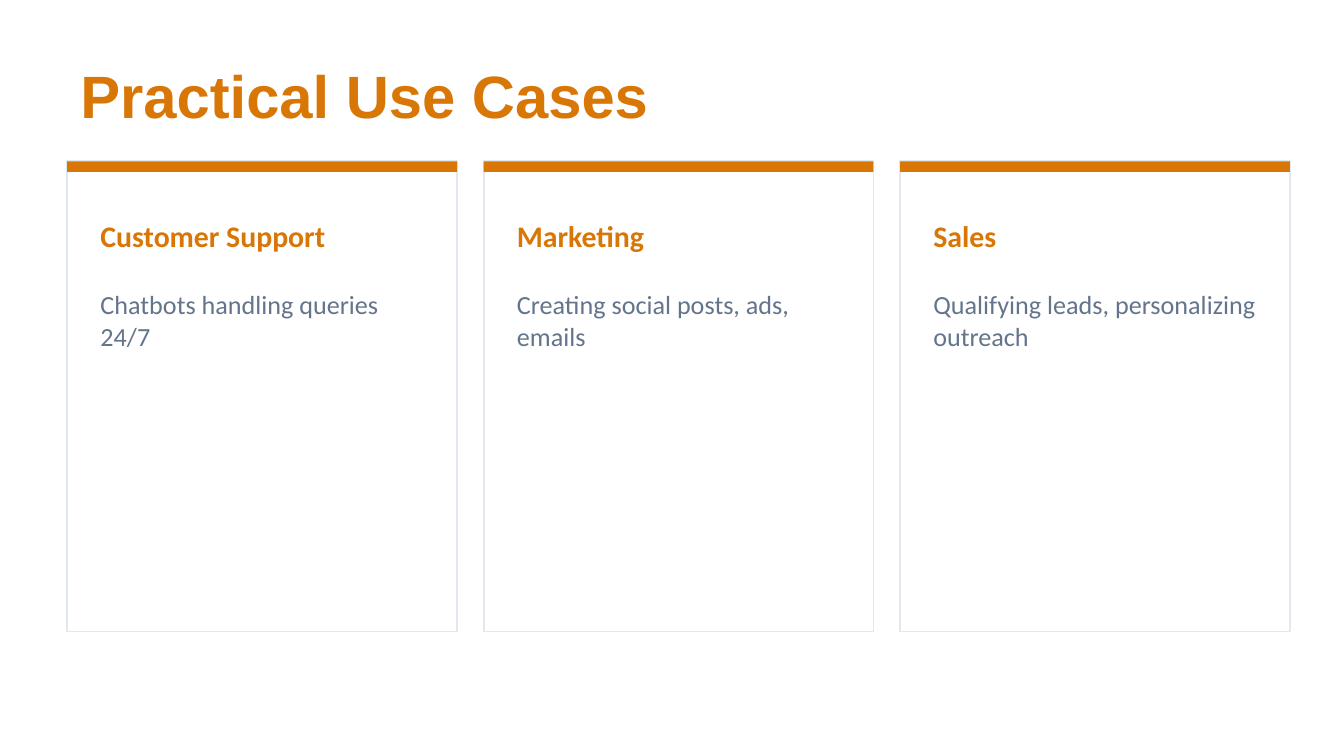
"""Build a slide with three cards of practical use cases."""
from pptx import Presentation
from pptx.dml.color import RGBColor
from pptx.enum.shapes import MSO_SHAPE as Shape
from pptx.enum.text import MSO_ANCHOR as Anchor
from pptx.util import Cm, Pt

AMBER = RGBColor(0xD9, 0x77, 0x06)
SLATE = RGBColor(0x64, 0x74, 0x8B)
BORDER = RGBColor(0xE2, 0xE8, 0xF0)
WHITE = RGBColor(0xFF, 0xFF, 0xFF)

LEFT, TOP = 1.27, 3.05
CARD_W, CARD_H, GAP = 7.37, 8.89, 0.5
BAR_H, INSET = 0.2, 0.38

USE_CASES = [
    ("Customer Support", "Chatbots handling queries 24/7"),
    ("Marketing", "Creating social posts, ads, emails"),
    ("Sales", "Qualifying leads, personalizing outreach"),
]


def add_rect(s, x, y, w, h, fill, line=None):
    sp = s.shapes.add_shape(Shape.RECTANGLE, Cm(x), Cm(y), Cm(w), Cm(h))
    sp.shadow.inherit = False
    sp.fill.solid()
    sp.fill.fore_color.rgb = fill
    if line is None:
        sp.line.fill.background()
    else:
        sp.line.color.rgb = line
        sp.line.width = Pt(1)


def add_text(s, x, y, w, h, text, size, color, font="Calibri", bold=False,
             anchor=Anchor.MIDDLE):
    tf = s.shapes.add_textbox(Cm(x), Cm(y), Cm(w), Cm(h)).text_frame
    tf.word_wrap = True
    tf.vertical_anchor = anchor
    r = tf.paragraphs[0].add_run()
    r.text = text
    r.font.name = font
    r.font.size = Pt(size)
    r.font.bold = bold
    r.font.color.rgb = color


def add_card(s, x, heading, detail):
    add_rect(s, x, TOP, CARD_W, CARD_H, WHITE, BORDER)
    add_rect(s, x, TOP, CARD_W, BAR_H, AMBER)
    text_x, text_w = x + INSET, CARD_W - 2 * INSET
    add_text(s, text_x, TOP + 0.76, text_w, 1.27, heading, 16, AMBER, bold=True)
    add_text(s, text_x, TOP + 2.28, text_w, 6.1, detail, 14, SLATE,
             anchor=Anchor.TOP)


def main():
    prs = Presentation()
    prs.slide_width, prs.slide_height = Cm(25.4), Cm(14.29)
    s = prs.slides.add_slide(prs.slide_layouts[6])
    s.background.fill.solid()
    s.background.fill.fore_color.rgb = WHITE
    add_text(s, LEFT, 1.02, 22.86, 1.52, "Practical Use Cases", 32, AMBER,
             font="Arial", bold=True)
    for i, (heading, detail) in enumerate(USE_CASES):
        add_card(s, LEFT + i * (CARD_W + GAP), heading, detail)
    prs.save("out.pptx")


if __name__ == "__main__":
    main()
